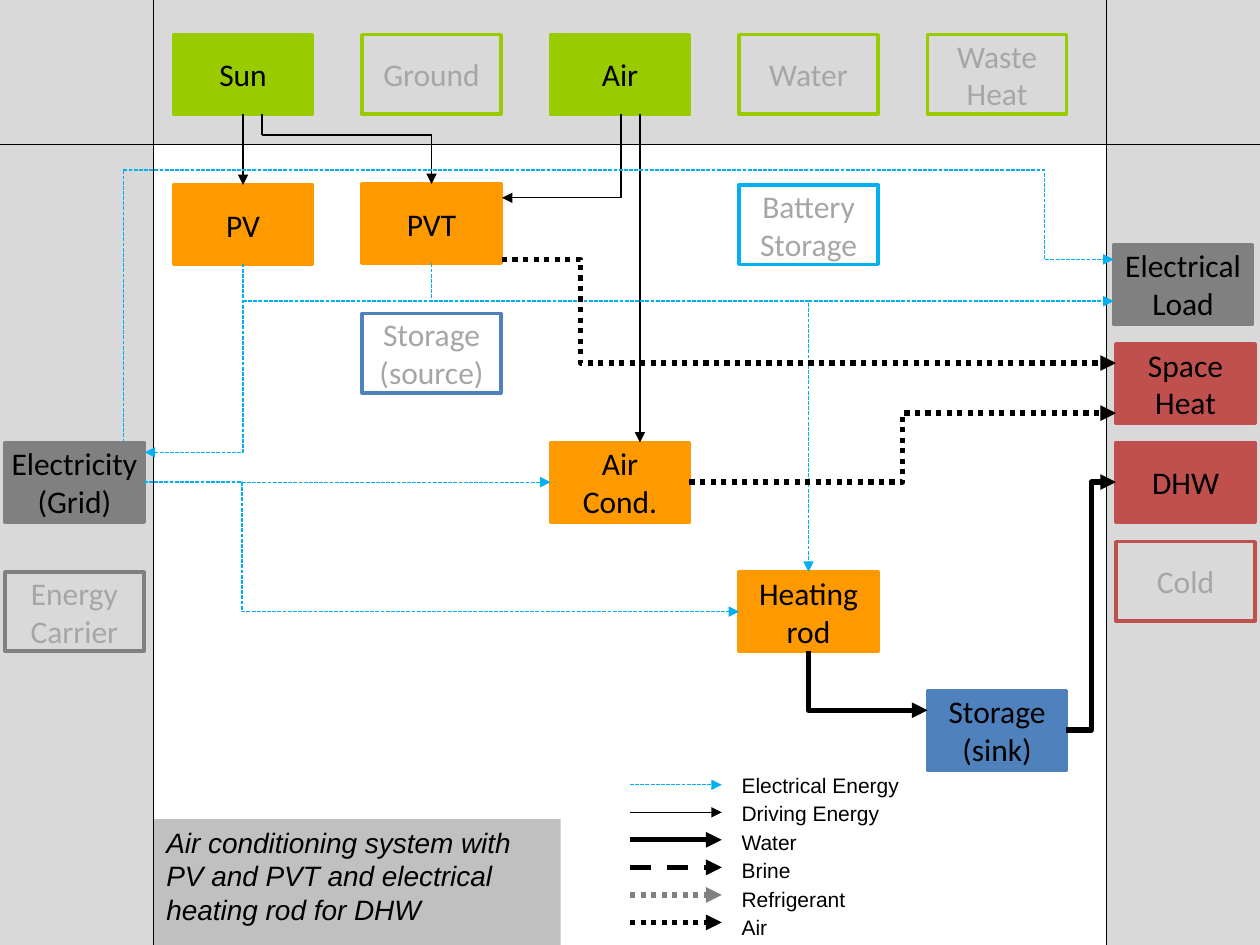
from pptx import Presentation
from pptx.dml.color import RGBColor
from pptx.enum.dml import MSO_LINE
from pptx.enum.shapes import MSO_CONNECTOR, MSO_SHAPE
from pptx.enum.text import MSO_ANCHOR, MSO_AUTO_SIZE, PP_ALIGN
from pptx.oxml.ns import qn
from pptx.util import Cm, Pt
from lxml import etree

WIDE, HIGH = 25.4, 19.05
LEFT, RIGHT, TOP = 3.1, 22.3, 2.92  # inner edges of the bands
BOX_W, BOX_H = 2.8, 1.6
COLS = [3.5 + 3.8 * i for i in range(5)]
BLACK, WHITE, PALE, GREY, BAND = "000000", "FFFFFF", "A6A6A6", "808080", "D9D9D9"
GREEN, AMBER, BLUE, RED, CYAN = "99CC00", "FF9900", "4F81BD", "C0504D", "00B0F0"
DOT, DASH, FINE = MSO_LINE.ROUND_DOT, MSO_LINE.DASH, MSO_LINE.SQUARE_DOT

# Flow kinds: colour, width in points, dash
POWER = (CYAN, 0.75, FINE)
DRIVE = (BLACK, 0.75, None)
WATER = (BLACK, 3, None)
BRINE = (BLACK, 3, DASH)
COOL = (GREY, 3, DOT)
AIR = (BLACK, 3, DOT)


def rgb(code):
    return RGBColor.from_string(code)


def style(para, size, font, code):
    for run in para.runs:
        run.font.size = Pt(size)
        run.font.name = font
        run.font.color.rgb = rgb(code)


def rect(slide, x, y, w, h, fill=None, edge=None):
    shape = slide.shapes.add_shape(MSO_SHAPE.RECTANGLE, Cm(x), Cm(y), Cm(w), Cm(h))
    shape.shadow.inherit = False
    if fill:
        shape.fill.solid()
        shape.fill.fore_color.rgb = rgb(fill)
    else:
        shape.fill.background()
    if edge:
        shape.line.color.rgb = rgb(edge)
        shape.line.width = Pt(2)
    else:
        shape.line.fill.background()
    return shape


def node(slide, text, x, y, edge, used=True, fill=None, slim=False):
    """A box of the system; an unused one is outlined with pale text."""
    shape = rect(slide, x, y, BOX_W, BOX_H, edge if used else fill, edge)
    frame = shape.text_frame
    frame.word_wrap = True
    frame.vertical_anchor = MSO_ANCHOR.MIDDLE
    if slim:
        frame.margin_left = frame.margin_right = Cm(0.1)
    frame.text = text
    for para in frame.paragraphs:
        para.alignment = PP_ALIGN.CENTER
        style(para, 18, "Calibri", BLACK if used else PALE)
    return shape


def spot(end):
    """Coordinates of a point, or of the middle of a box's side."""
    first, second = end
    if isinstance(first, (int, float)):
        return Cm(first), Cm(second)
    across, down = [(0.5, 0), (0, 0.5), (0.5, 1), (1, 0.5)][second]
    return (int(first.left + across * first.width),
            int(first.top + down * first.height))


def link(slide, start, end, flow, tip="tailEnd", kind=MSO_CONNECTOR.STRAIGHT):
    line = slide.shapes.add_connector(kind, *spot(start), *spot(end))
    if kind == MSO_CONNECTOR.STRAIGHT:
        for (item, site), join in ((start, line.begin_connect), (end, line.end_connect)):
            if not isinstance(item, (int, float)):
                join(item, site)
    code, width, dash = flow
    line.line.color.rgb = rgb(code)
    line.line.width = Pt(width)
    if dash:
        line.line.dash_style = dash
    props = line._element.spPr
    if tip:
        etree.SubElement(props.find(qn("a:ln")), qn("a:" + tip), type="triangle")
    etree.SubElement(props, qn("a:effectLst"))
    return line


def step(slide, start, end, flow, turn):
    """Across, along the vertical at x = turn, then across again."""
    line = link(slide, start, end, flow, kind=MSO_CONNECTOR.ELBOW)
    x1, x2 = spot(start)[0], spot(end)[0]
    ratio = round((Cm(turn) - x1) / (x2 - x1) * 100000)
    geom = line._element.spPr.find(qn("a:prstGeom"))
    guides = geom.get_or_add_avLst()
    etree.SubElement(guides, qn("a:gd"), name="adj1", fmla=f"val {ratio}")


def corner(slide, flat, tall, flow, tip):
    """One bend: across from flat, then vertical to tall."""
    line = link(slide, flat, tall, flow, tip, MSO_CONNECTOR.ELBOW)
    line._element.spPr.find(qn("a:prstGeom")).set("prst", "bentConnector2")


def caption(slide, x, y, w, h):
    title = slide.shapes.title
    title.left, title.top, title.width, title.height = Cm(x), Cm(y), Cm(w), Cm(h)
    title.fill.solid()
    title.fill.fore_color.rgb = rgb("C0C0C0")
    frame = title.text_frame
    frame.text = "Air conditioning system with PV and PVT and electrical heating rod for DHW"
    frame.word_wrap = True
    frame.auto_size = MSO_AUTO_SIZE.NONE
    frame.vertical_anchor = MSO_ANCHOR.TOP
    para = frame.paragraphs[0]
    para.alignment = PP_ALIGN.LEFT
    style(para, 16, "Arial", BLACK)
    para.runs[0].font.italic = True


def bands(slide):
    rect(slide, 0, TOP, LEFT, HIGH - TOP, BAND)
    rect(slide, RIGHT, TOP, WIDE - RIGHT, HIGH - TOP, BAND)
    rect(slide, 0, 0, WIDE, TOP, BAND)
    for x in (LEFT, RIGHT):
        link(slide, (x, HIGH), (x, 0), DRIVE, None)
    link(slide, (0, TOP), (WIDE, TOP), DRIVE, None)


def system(slide):
    # Sources
    names = ["Sun", "Ground", "Air", "Water", "Waste Heat"]
    sun, *_ = [node(slide, name, x, 0.7, GREEN, name in ("Sun", "Air"))
               for name, x in zip(names, COLS)]
    # Converters and storage
    pv = node(slide, "PV", COLS[0], 3.73, AMBER)
    pvt = node(slide, "PVT", COLS[1], 3.71, AMBER)
    cond = node(slide, "Air Cond.", COLS[2], 8.92, AMBER)
    rod = node(slide, "Heating rod", COLS[3], 11.53, AMBER)
    node(slide, "Battery Storage", COLS[3], 3.73, CYAN, False)
    node(slide, "Storage (source)", COLS[1], 6.32, BLUE, False, WHITE)
    sink = node(slide, "Storage (sink)", COLS[4], 13.92, BLUE, slim=True)
    # Supply and demand
    grid = node(slide, "Electricity\n(Grid)", 0.1, 8.92, GREY, slim=True)
    node(slide, "Energy Carrier", 0.1, 11.53, GREY, False, BAND)
    node(slide, "Electrical Load", 22.45, 4.93, GREY, slim=True)
    node(slide, "Space Heat", 22.5, 6.93, RED)
    dhw = node(slide, "DHW", 22.5, 8.92, RED)
    node(slide, "Cold", 22.5, 10.92, RED, False)

    # Driving energy
    link(slide, (sun, 2), (pv, 0), DRIVE)
    link(slide, (5.28, 2.3), (5.28, 2.72), DRIVE, None)
    link(slide, (5.28, 2.72), (8.7, 2.72), DRIVE, None)
    link(slide, (8.7, 2.72), (pvt, 0), DRIVE)
    corner(slide, (10.12, 3.99), (12.52, 2.3), DRIVE, "headEnd")
    link(slide, (12.9, 2.3), (12.9, 8.92), DRIVE)
    # Electrical energy
    bus = 6.07
    link(slide, (grid, 3), (cond, 1), POWER)
    step(slide, (grid, 3), (rod, 1), POWER, 4.88)
    corner(slide, (2.92, 9.12), (pv, 2), POWER, "headEnd")
    corner(slide, (4.9, bus), (rod, 0), POWER, "tailEnd")
    link(slide, (pvt, 2), (8.7, bus), POWER, None)
    link(slide, (16.3, bus), (22.45, bus), POWER)
    link(slide, (2.49, 8.92), (2.49, 3.43), POWER, None)
    step(slide, (2.49, 3.43), (22.45, 5.23), POWER, 21.06)
    # Heat by air and water
    step(slide, (10.12, 5.23), (22.5, 7.32), AIR, 11.7)
    step(slide, (cond, 3), (22.5, 8.33), AIR, 18.2)
    corner(slide, (18.7, 14.32), (rod, 2), WATER, "headEnd")
    step(slide, (sink, 3), (dhw, 1), WATER, 22)


def legend(slide, x, y):
    rows = [("Electrical Energy", POWER), ("Driving Energy", DRIVE), ("Water", WATER),
            ("Brine", BRINE), ("Refrigerant", COOL), ("Air", AIR)]
    shape = slide.shapes.add_textbox(Cm(x + 2), Cm(y), Cm(3.8), Cm(3.58))
    frame = shape.text_frame
    frame.word_wrap = True
    frame.text = "\n".join(name for name, _ in rows)
    for i, para in enumerate(frame.paragraphs):
        para.space_before = Pt(1.9)
        style(para, 12, "Arial", BLACK)
        mid = y + 0.38 + 0.555 * i
        link(slide, (x, mid), (x + 1.85, mid), rows[i][1])


def main():
    deck = Presentation()
    deck.slide_width, deck.slide_height = Cm(WIDE), Cm(HIGH)
    slide = deck.slides.add_slide(deck.slide_layouts[5])
    caption(slide, LEFT, 16.51, 8.2, 2.54)
    bands(slide)
    system(slide)
    legend(slide, 12.7, 15.44)
    deck.save("out.pptx")


if __name__ == "__main__":
    main()
